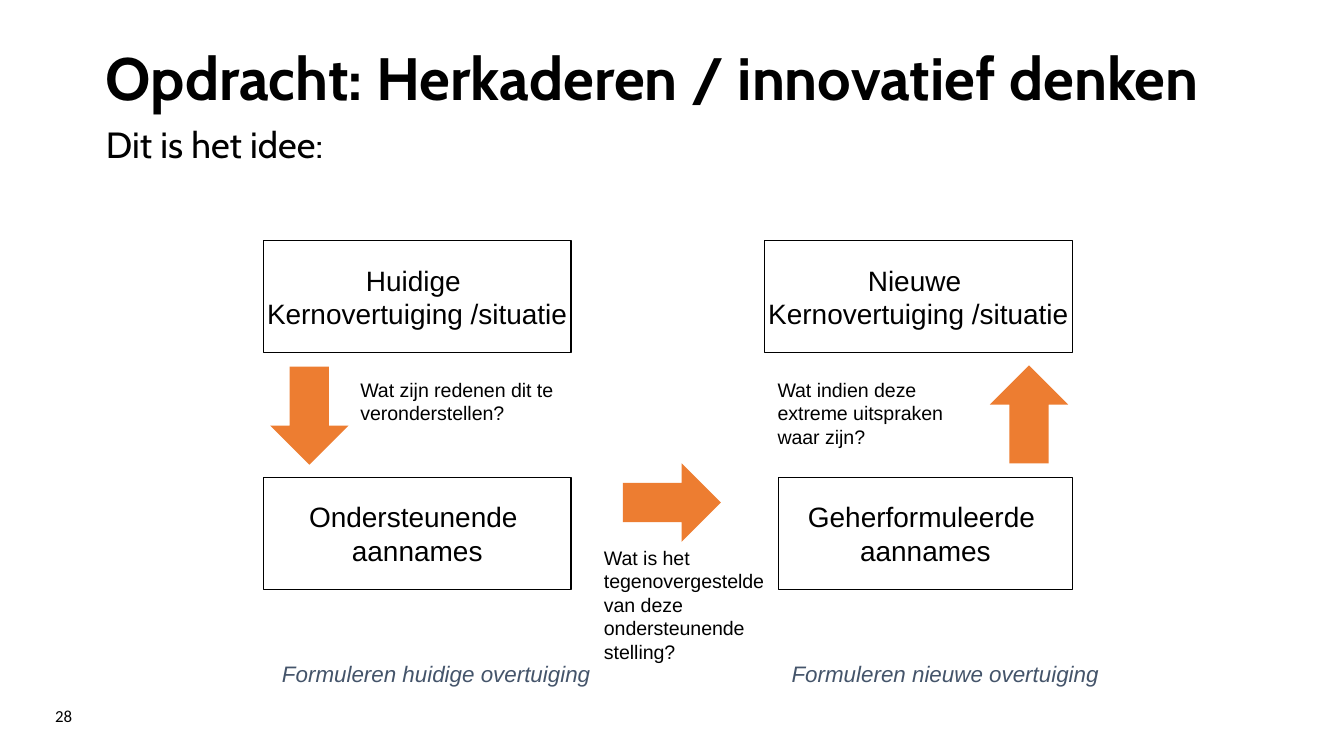
from pptx import Presentation
from pptx.dml.color import RGBColor
from pptx.enum.shapes import MSO_SHAPE
from pptx.enum.text import MSO_ANCHOR, MSO_AUTO_SIZE, PP_ALIGN
from pptx.util import Pt

LEFT, MID, RIGHT = PP_ALIGN.LEFT, PP_ALIGN.CENTER, PP_ALIGN.RIGHT
TOP, CENTER = MSO_ANCHOR.TOP, MSO_ANCHOR.MIDDLE
RECT, ARROW = MSO_SHAPE.RECTANGLE, MSO_SHAPE.DOWN_ARROW
FIXED = MSO_AUTO_SIZE.NONE
PX = 9525
INK = {"black": "000000", "orange": "ED7D31", "slate": "44546A"}


def color(name):
    return RGBColor.from_string(INK[name])


def write(shape, text, size, font="Arial", ink="black", bold=False, italic=False,
          align=LEFT, anchor=TOP, wrap=True, space=None):
    frame = shape.text_frame
    frame.auto_size = FIXED
    frame.word_wrap = wrap
    frame.vertical_anchor = anchor
    frame.text = text
    for para in frame.paragraphs:
        para.alignment = align
        para.line_spacing = space
        style = para.runs[0].font
        style.name, style.size = font, Pt(size)
        style.bold, style.italic = bold, italic
        style.color.rgb = color(ink)


deck = Presentation()
deck.slide_width, deck.slide_height = 960 * PX, 540 * PX
slide = deck.slides.add_slide(deck.slide_layouts[0])
shapes = slide.shapes

title, lead = slide.placeholders
for holder, top, high in [(title, 29, 58), (lead, 86, 30)]:
    holder.left, holder.top = 66 * PX, top * PX
    holder.width, holder.height = 828 * PX, high * PX
write(title, "Opdracht: Herkaderen / innovatief denken", 32, font="Cabin",
      bold=True, anchor=CENTER, space=0.9)
write(lead, "Dit is het idee:", 19.5, font="Cabin", space=0.9)

page = shapes.add_textbox(12 * PX, 491 * PX, 49 * PX, 40 * PX)
write(page, "28", 9, font="Calibri", align=RIGHT, anchor=CENTER)

boxes = [
    (188, 172, 220, "Huidige \nKernovertuiging /situatie"),
    (188, 341, 220, "Ondersteunende \naannames"),
    (556, 341, 210, "Geherformuleerde \naannames"),
    (546, 172, 220, "Nieuwe \nKernovertuiging /situatie"),
]
for left, top, wide, text in boxes:
    box = shapes.add_shape(RECT, left * PX, top * PX, wide * PX, 80 * PX)
    box.shadow.inherit = False
    box.fill.background()
    box.line.color.rgb = color("black")
    box.line.width = Pt(0.75)
    write(box, text, 15, align=MID, anchor=CENTER, wrap=False)

for left, top, turn in [(193, 262, 0), (707, 261, 180), (452, 324, 270)]:
    arrow = shapes.add_shape(ARROW, left * PX, top * PX, 56 * PX, 70 * PX)
    arrow.rotation = turn
    arrow.shadow.inherit = False
    arrow.fill.solid()
    arrow.fill.fore_color.rgb = color("orange")
    arrow.line.fill.background()

asks = [
    (248, 265, 166, 43, "Wat zijn redenen dit te veronderstellen?"),
    (422, 385, 135, 111,
     "Wat is het tegenovergestelde van deze ondersteunende stelling?"),
    (546, 265, 171, 78, "Wat indien deze extreme uitspraken waar zijn?"),
]
for left, top, wide, high, text in asks:
    ask = shapes.add_textbox(left * PX, top * PX, wide * PX, high * PX)
    write(ask, text, 10.5)

for left, text in [(192, "Formuleren huidige overtuiging"),
                   (556, "Formuleren nieuwe overtuiging")]:
    label = shapes.add_textbox(left * PX, 467 * PX, 241 * PX, 29 * PX)
    write(label, text, 12, ink="slate", italic=True, wrap=False)

deck.save("out.pptx")
